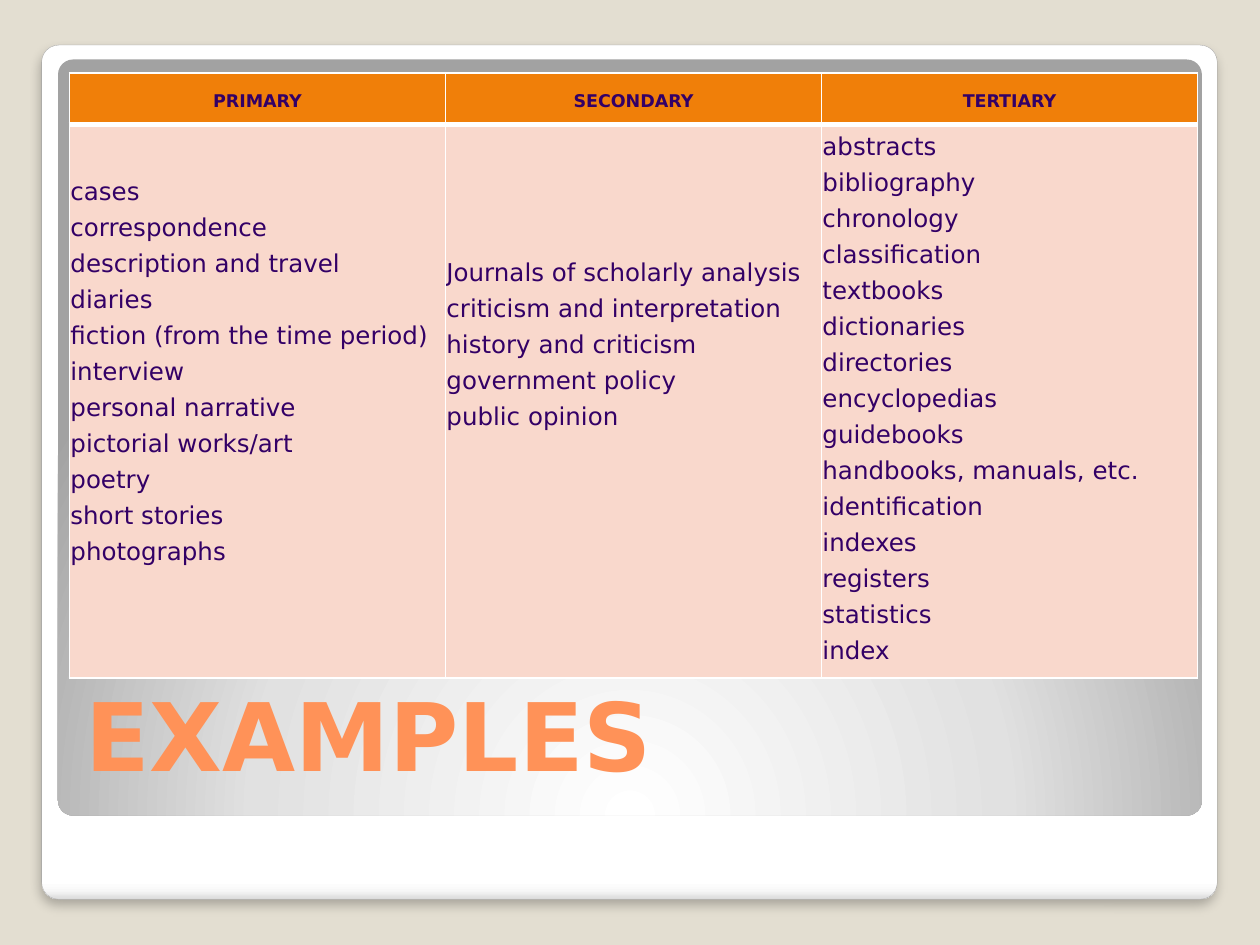
from lxml.etree import SubElement
from pptx import Presentation
from pptx.dml.color import RGBColor
from pptx.enum.shapes import MSO_SHAPE
from pptx.enum.text import MSO_ANCHOR, PP_ALIGN
from pptx.oxml import parse_xml
from pptx.oxml.ns import nsdecls, qn
from pptx.util import Cm, Pt

FONT = "DejaVu Sans"
INK = "330066"
WHITE = "FFFFFF"

# Heading, space above the list (cm), entries
SOURCE_TYPES = [
    ("PRIMARY", 0.93, [
        "cases", "correspondence", "description and travel", "diaries",
        "fiction (from the time period)", "interview", "personal narrative",
        "pictorial works/art", "poetry", "short stories", "photographs"]),
    ("SECONDARY", 2.56, [
        "Journals of scholarly analysis", "criticism and interpretation",
        "history and criticism", "government policy", "public opinion"]),
    ("TERTIARY", 0.02, [
        "abstracts", "bibliography", "chronology", "classification",
        "textbooks", "dictionaries", "directories", "encyclopedias",
        "guidebooks", "handbooks, manuals, etc.", "identification",
        "indexes", "registers", "statistics", "index"]),
]


def color(hex_code):
    return RGBColor.from_string(hex_code)


def style_paragraph(paragraph, size, hex_code, bold=False):
    font = paragraph.font
    font.name, font.size, font.bold = FONT, Pt(size), bold
    font.color.rgb = color(hex_code)


def add_panel(slide, left, top, width, height, stops, direction):
    """Rounded panel with a gradient; direction is the a:lin or a:path XML."""
    panel = slide.shapes.add_shape(MSO_SHAPE.ROUNDED_RECTANGLE,
                                   Cm(left), Cm(top), Cm(width), Cm(height))
    panel.adjustments[0] = 0.02
    panel.shadow.inherit = False
    panel.line.fill.background()
    stop_xml = "".join(f'<a:gs pos="{position * 1000}"><a:srgbClr val="{code}"/></a:gs>'
                       for position, code in stops)
    gradient = parse_xml(f'<a:gradFill {nsdecls("a")} rotWithShape="1">'
                         f'<a:gsLst>{stop_xml}</a:gsLst>{direction}</a:gradFill>')
    panel._element.spPr.find(qn("a:prstGeom")).addnext(gradient)
    return panel


def add_soft_shadow(panel):
    effects = panel._element.spPr.find(qn("a:effectLst"))
    shadow = SubElement(effects, qn("a:outerShdw"), blurRad=str(Pt(6)),
                        dist=str(Pt(4)), dir="5400000", algn="t", rotWithShape="0")
    black = SubElement(shadow, qn("a:srgbClr"), val="000000")
    SubElement(black, qn("a:alpha"), val="25000")


def set_borders(cell, top=1, bottom=1):
    widths = {"L": 1, "R": 1, "T": top, "B": bottom}
    for index, (side, width) in enumerate(widths.items()):
        border = parse_xml(
            f'<a:ln{side} {nsdecls("a")} w="{Pt(width)}"><a:solidFill>'
            f'<a:srgbClr val="{WHITE}"/></a:solidFill></a:ln{side}>')
        cell._tc.get_or_add_tcPr().insert(index, border)


def fill_cell(cell, lines, fill, size, bold, align, anchor, margin_top):
    cell.text = "\n".join(lines)
    cell.fill.solid()
    cell.fill.fore_color.rgb = color(fill)
    cell.vertical_anchor = anchor
    cell.margin_left = cell.margin_right = cell.margin_bottom = Cm(0.02)
    cell.margin_top = Cm(margin_top)
    for paragraph in cell.text_frame.paragraphs:
        style_paragraph(paragraph, size, INK, bold)
        paragraph.alignment = align
        paragraph.line_spacing = 1.25


def add_source_table(slide):
    table = slide.shapes.add_table(2, len(SOURCE_TYPES), Cm(1.4), Cm(1.47),
                                   Cm(22.74), Cm(11.94)).table
    table.rows[0].height, table.rows[1].height = Cm(1.04), Cm(10.9)
    for index, (heading, space_above, entries) in enumerate(SOURCE_TYPES):
        table.columns[index].width = Cm(7.58)
        header, body = table.cell(0, index), table.cell(1, index)
        fill_cell(header, [heading], "F07F09", 10, True,
                  PP_ALIGN.CENTER, MSO_ANCHOR.MIDDLE, 0.02)
        fill_cell(body, entries, "F9D8CC", 14, False,
                  PP_ALIGN.LEFT, MSO_ANCHOR.TOP, space_above)
        set_borders(header, bottom=3)
        set_borders(body, top=3)


def add_title(slide, text):
    title = slide.shapes.add_textbox(Cm(1.47), Cm(13.13), Cm(22.73), Cm(2.92))
    frame = title.text_frame
    frame.word_wrap = True
    frame.vertical_anchor = MSO_ANCHOR.BOTTOM
    frame.text = text
    style_paragraph(frame.paragraphs[0], 54, "FF9258", bold=True)


def main():
    deck = Presentation()
    deck.slide_width, deck.slide_height = Cm(25.4), Cm(19.05)
    slide = deck.slides.add_slide(deck.slide_layouts[6])
    slide.background.fill.solid()
    slide.background.fill.fore_color.rgb = color("E3DED1")

    # White card with a grey panel on it
    card = add_panel(slide, 0.84, 0.91, 23.7, 17.22,
                     [(0, WHITE), (98, WHITE), (99, "F7F7F7"), (100, "DADADA")],
                     '<a:lin ang="5400000" scaled="0"/>')
    card.line.color.rgb = color("A4A4A4")
    card.line.width = Pt(0.16)
    add_soft_shadow(card)
    add_panel(slide, 1.17, 1.2, 23.06, 15.24,
              [(0, WHITE), (55, "E1E1E1"), (100, "A2A2A2")],
              '<a:path path="circle">'
              '<a:fillToRect l="50000" t="175000" r="50000" b="-75000"/></a:path>')

    # Title and table
    add_title(slide, "EXAMPLES")
    add_source_table(slide)
    deck.save("out.pptx")


if __name__ == "__main__":
    main()
